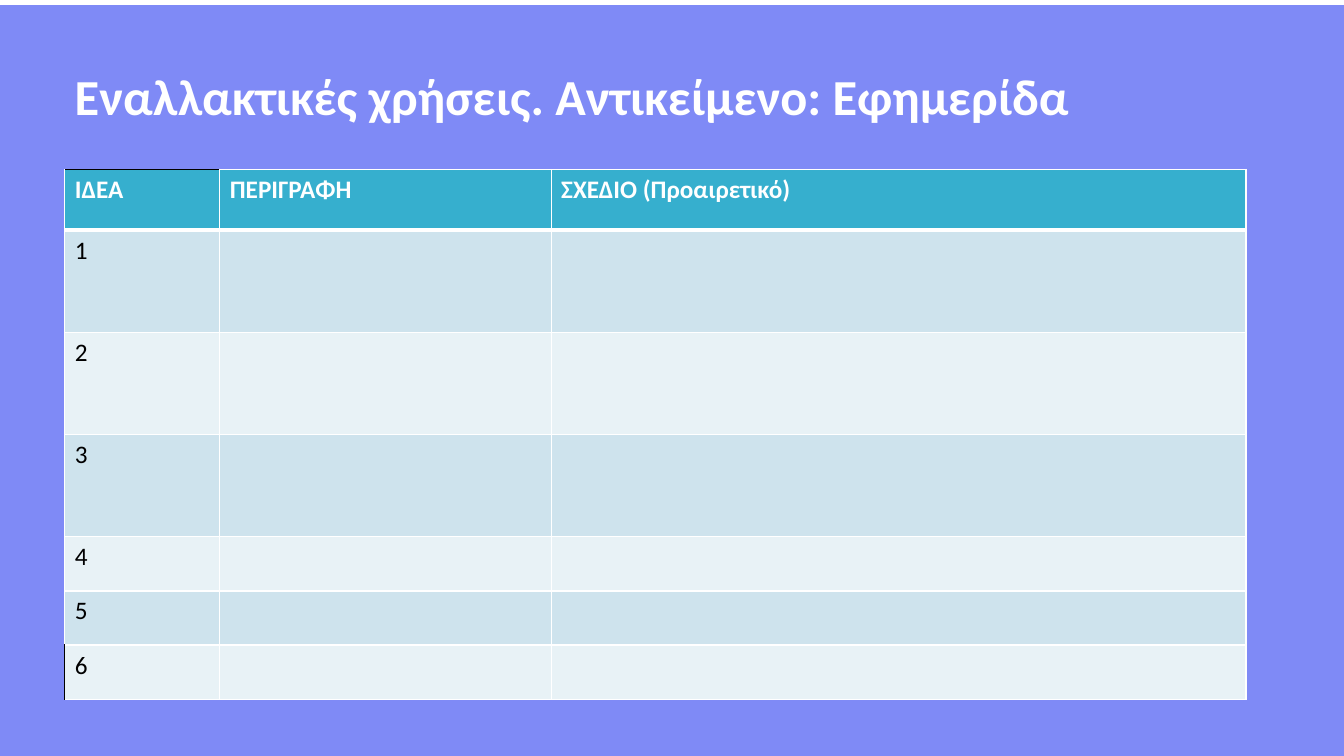
import dataclasses
import typing

import lxml.etree
import pptx
import pptx.dml.color
import pptx.enum.shapes
import pptx.enum.text
import pptx.oxml.ns
import pptx.util

Pt = pptx.util.Pt
RGBColor = pptx.dml.color.RGBColor

WHITE = RGBColor(0xFF, 0xFF, 0xFF)
BLACK = RGBColor(0x00, 0x00, 0x00)
PERIWINKLE = RGBColor(0x7F, 0x8A, 0xF6)
TEAL = RGBColor(0x36, 0xAF, 0xCE)
BAND_DARK = RGBColor(0xCE, 0xE3, 0xED)
BAND_LIGHT = RGBColor(0xE8, 0xF2, 0xF6)

TITLE = "Εναλλακτικές χρήσεις. Αντικείμενο: Εφημερίδα"
HEADINGS = ("ΙΔΕΑ", "ΠΕΡΙΓΡΑΦΗ", "ΣΧΕΔΙΟ (Προαιρετικό)")
COLUMN_WIDTHS = (110.7, 236.7, 496.4)
HEADER_HEIGHT = 43.4
IDEA_HEIGHTS = (73, 73, 73, 38.7, 38.7, 38.7)
LEFT = 46.3
TABLE_TOP = 121
WIDTH = sum(COLUMN_WIDTHS)


@dataclasses.dataclass(frozen=True)
class Border:
    color: RGBColor = WHITE
    width: float = 1


@dataclasses.dataclass(frozen=True)
class TableRow:
    texts: tuple[str, ...]
    height: float
    fill: RGBColor
    ink: RGBColor = BLACK
    bold: bool = False


def write_text(frame: typing.Any, text: str, size: float, color: RGBColor, bold: bool) -> None:
    para = frame.paragraphs[0]
    span = para.add_run()
    span.text = text
    formats = {"name": "Calibri", "size": Pt(size), "bold": bold}
    for font in (para.font, span.font):
        for name, value in formats.items():
            setattr(font, name, value)
        font.color.rgb = color


def draw_background(page: typing.Any) -> None:
    panel = page.shapes.add_shape(
        pptx.enum.shapes.MSO_SHAPE.RECTANGLE, Pt(-4.3), Pt(3.6), Pt(968.4), Pt(540)
    )
    panel.shadow.inherit = False
    panel.fill.solid()
    panel.fill.fore_color.rgb = PERIWINKLE
    panel.line.fill.background()


def draw_title(page: typing.Any) -> None:
    box = page.shapes.add_textbox(Pt(LEFT), Pt(48.2), Pt(WIDTH), Pt(444.2))
    frame = box.text_frame
    frame.word_wrap = True
    frame.vertical_anchor = pptx.enum.text.MSO_ANCHOR.TOP
    frame.paragraphs[0].line_spacing = 0.9
    write_text(frame, TITLE, 36, WHITE, True)


def set_borders(cell: typing.Any, borders: dict[str, Border]) -> None:
    properties = cell._tc.get_or_add_tcPr()
    qn = pptx.oxml.ns.qn
    for side, border in borders.items():
        line = lxml.etree.SubElement(
            properties, qn(f"a:ln{side}"), w=str(int(Pt(border.width)))
        )
        fill = lxml.etree.SubElement(line, qn("a:solidFill"))
        lxml.etree.SubElement(fill, qn("a:srgbClr"), val=str(border.color))


def cell_borders(row: int, column: int, last_row: int) -> dict[str, Border]:
    borders = {side: Border() for side in "LRTB"}
    if row == 0:
        borders["B"] = Border(width=3)
    if row == 1:
        borders["T"] = Border(width=3)
    if (row, column) == (0, 0):
        borders["T"] = Border(BLACK)
    if (row, column) == (last_row, 0):
        borders["L"] = Border(BLACK)
    return borders


def draw_table(page: typing.Any, rows: list[TableRow]) -> None:
    height = sum(row.height for row in rows)
    table = page.shapes.add_table(
        len(rows), len(COLUMN_WIDTHS), Pt(LEFT), Pt(TABLE_TOP), Pt(WIDTH), Pt(height)
    ).table
    for column, width in zip(table.columns, COLUMN_WIDTHS):
        column.width = Pt(width)
    for row_index, row in enumerate(rows):
        table.rows[row_index].height = Pt(row.height)
        for column_index, text in enumerate(row.texts):
            cell = table.cell(row_index, column_index)
            set_borders(cell, cell_borders(row_index, column_index, len(rows) - 1))
            cell.fill.solid()
            cell.fill.fore_color.rgb = row.fill
            if text:
                write_text(cell.text_frame, text, 18, row.ink, row.bold)


def main() -> None:
    deck = pptx.Presentation()
    deck.slide_width = Pt(960)
    deck.slide_height = Pt(540)
    page = deck.slides.add_slide(deck.slide_layouts[6])
    rows = [TableRow(HEADINGS, HEADER_HEIGHT, TEAL, WHITE, True)]
    for number, height in enumerate(IDEA_HEIGHTS, start=1):
        band = BAND_DARK if number % 2 else BAND_LIGHT
        rows.append(TableRow((str(number), "", ""), height, band))
    draw_background(page)
    draw_title(page)
    draw_table(page, rows)
    deck.save("out.pptx")


if __name__ == "__main__":
    main()
